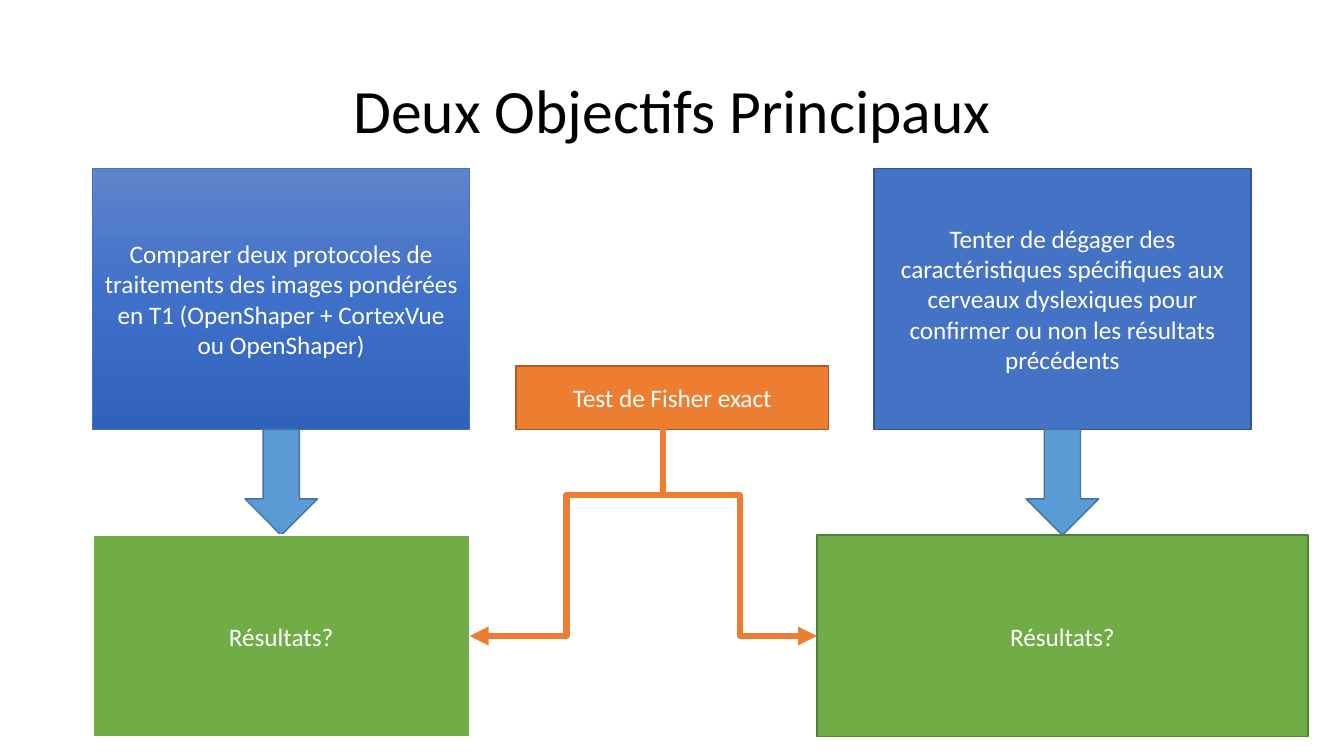
"""Build a slide with two main goals, their results and the test that links them."""
from copy import deepcopy
from dataclasses import dataclass

from lxml.etree import SubElement
from pptx import Presentation
from pptx.dml.color import RGBColor
from pptx.enum.shapes import MSO_CONNECTOR, MSO_SHAPE
from pptx.enum.text import MSO_ANCHOR, PP_ALIGN
from pptx.oxml.ns import qn
from pptx.util import Pt

TITLE = "Deux Objectifs Principaux"
TEST = "Test de Fisher exact"
RESULT = "Résultats?"
GOALS = [
    "Comparer deux protocoles de traitements des images pondérées "
    "en T1 (OpenShaper + CortexVue ou OpenShaper)",
    "Tenter de dégager des caractéristiques spécifiques aux cerveaux "
    "dyslexiques pour confirmer ou non les résultats précédents",
]


@dataclass(frozen=True)
class Theme:
    font: str = "Calibri"
    head: int = 44
    body: int = 18
    black: str = "000000"
    white: str = "FFFFFF"
    blue: str = "4472C4"
    navy: str = "325491"
    sky: str = "5B9BD5"
    steel: str = "43739E"
    green: str = "70AD47"
    moss: str = "538035"
    orange: str = "ED7D31"
    rust: str = "AF5C24"
    shade: tuple = ((0, "6183CB"), (0.5, "3E70CA"), (1, "3062BB"))


THEME = Theme()
MIDS = (200.88, 758.88)
GOAL_W, GOAL_H, GOAL_TOP = 269.28, 186.48, 120.24
ARROW_W, ARROW_H = 51.84, 75.6
RESULT_WS, RESULT_H = (269.28, 350.64), 144
TEST_LEFT, TEST_W, TEST_H = 368.64, 223.2, 45.36
STEM_X, STEM_H = 473.76, 46.8
GOAL_END = GOAL_TOP + GOAL_H
RESULT_TOP = GOAL_END + ARROW_H


def color(code):
    return RGBColor.from_string(code)


def write(shape, text, size, ink):
    frame = shape.text_frame
    frame.word_wrap = True
    frame.vertical_anchor = MSO_ANCHOR.MIDDLE
    frame.text = text
    para = frame.paragraphs[0]
    para.alignment = PP_ALIGN.CENTER
    font = para.runs[0].font
    font.name, font.size = THEME.font, Pt(size)
    font.color.rgb = color(ink)
    return para


def draw(slide, kind, box, fill, edge, width=1, text=""):
    shape = slide.shapes.add_shape(kind, *map(Pt, box))
    shape.shadow.inherit = False
    shape.fill.solid()
    shape.fill.fore_color.rgb = color(fill)
    shape.line.color.rgb = color(edge)
    shape.line.width = Pt(width)
    if text:
        write(shape, text, THEME.body, THEME.white)
    return shape


def blend(shape, stops):
    shape.fill.gradient()
    shape.fill.gradient_angle = 270
    group = shape._element.spPr.find(".//" + qn("a:gsLst"))
    group.append(deepcopy(group[-1]))
    for stop, (place, code) in zip(shape.fill.gradient_stops, stops):
        stop.position = place
        stop.color.rgb = color(code)


def link(slide, kind, start, end, arrow=False):
    line = slide.shapes.add_connector(kind, *map(Pt, (*start, *end)))
    line.line.color.rgb = color(THEME.orange)
    line.line.width = Pt(4.5)
    if arrow:
        SubElement(line.line._get_or_add_ln(), qn("a:tailEnd"), type="triangle")
    SubElement(line._element.spPr, qn("a:effectLst"))


def main():
    deck = Presentation()
    deck.slide_width, deck.slide_height = Pt(960), Pt(540)
    slide = deck.slides.add_slide(deck.slide_layouts[6])

    title = slide.shapes.add_textbox(Pt(66.24), Pt(28.8), Pt(828), Pt(104.4))
    write(title, TITLE, THEME.head, THEME.black).line_spacing = 0.9

    rect = MSO_SHAPE.RECTANGLE
    goals = []
    for mid, text, edge in zip(MIDS, GOALS, (THEME.blue, THEME.navy)):
        box = (mid - GOAL_W / 2, GOAL_TOP, GOAL_W, GOAL_H)
        goals.append(draw(slide, rect, box, THEME.blue, edge, 1, text))
    blend(goals[0], THEME.shade)
    goals[0].line.width = Pt(0.5)

    for mid in MIDS:
        box = (mid - ARROW_W / 2, GOAL_END, ARROW_W, ARROW_H)
        draw(slide, MSO_SHAPE.DOWN_ARROW, box, THEME.sky, THEME.steel)

    edges = ((THEME.white, 1.5), (THEME.moss, 1))
    for mid, wide, (edge, width) in zip(MIDS, RESULT_WS, edges):
        box = (mid - wide / 2, RESULT_TOP, wide, RESULT_H)
        draw(slide, rect, box, THEME.green, edge, width, RESULT)

    box = (TEST_LEFT, GOAL_END - TEST_H, TEST_W, TEST_H)
    draw(slide, rect, box, THEME.orange, THEME.rust, 1, TEST)

    fork = (STEM_X, GOAL_END + STEM_H)
    link(slide, MSO_CONNECTOR.STRAIGHT, (STEM_X, GOAL_END), fork)
    ends = (MIDS[0] + RESULT_WS[0] / 2, MIDS[1] - RESULT_WS[1] / 2)
    for side in ends:
        end = (side, RESULT_TOP + RESULT_H / 2)
        link(slide, MSO_CONNECTOR.ELBOW, fork, end, True)

    deck.save("out.pptx")


if __name__ == "__main__":
    main()
